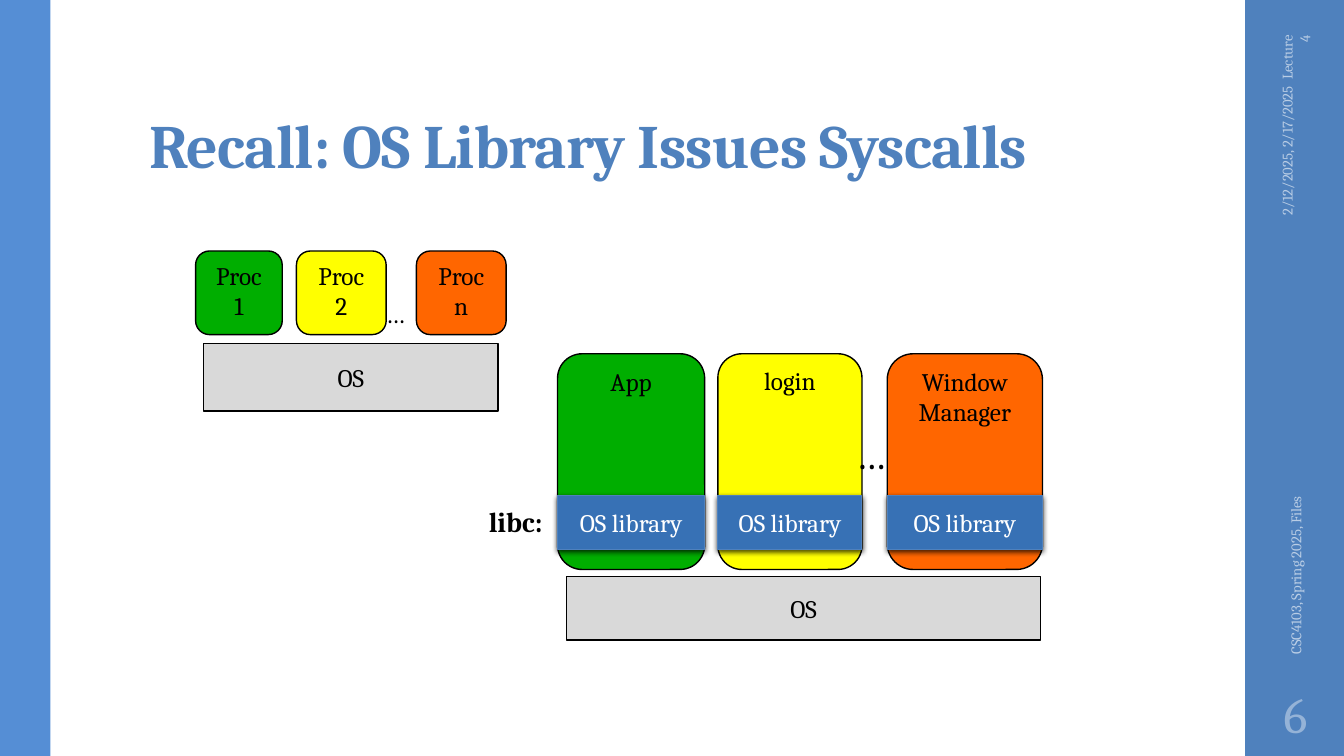
from lxml import etree
from pptx import Presentation
from pptx.dml.color import RGBColor
from pptx.enum.shapes import MSO_SHAPE
from pptx.enum.text import MSO_ANCHOR, PP_ALIGN
from pptx.oxml.ns import qn
from pptx.util import Inches, Pt

RECT, ROUNDED = MSO_SHAPE.RECTANGLE, MSO_SHAPE.ROUNDED_RECTANGLE
TOP, MIDDLE, BOTTOM = MSO_ANCHOR.TOP, MSO_ANCHOR.MIDDLE, MSO_ANCHOR.BOTTOM
LEFT, CENTER, RIGHT = PP_ALIGN.LEFT, PP_ALIGN.CENTER, PP_ALIGN.RIGHT

FONT = "Cambria"
BLACK = RGBColor(0x00, 0x00, 0x00)
WHITE = RGBColor(0xFF, 0xFF, 0xFF)
BLUE = RGBColor(0x4F, 0x81, 0xBD)
LIGHT_BLUE = RGBColor(0x55, 0x8E, 0xD5)
PALE_BLUE = RGBColor(0xB9, 0xCD, 0xE5)
NUMBER_BLUE = RGBColor(0x95, 0xB3, 0xD7)
LIBRARY_BLUE = RGBColor(0x37, 0x71, 0xB5)
GRAY = RGBColor(0xD9, 0xD9, 0xD9)
GREEN = RGBColor(0x00, 0xAE, 0x00)
YELLOW = RGBColor(0xFF, 0xFF, 0x00)
ORANGE = RGBColor(0xFF, 0x66, 0x00)

PROCESSES = [
    ("Proc 1", 1.94, 0.86, GREEN),
    ("Proc 2", 2.94, 0.89, YELLOW),
    ("Proc n", 4.13, 0.89, ORANGE),
]
PROGRAMS = [
    ("App", 5.53, 1.46, GREEN),
    ("login", 7.12, 1.43, YELLOW),
    ("Window Manager", 8.8, 1.54, ORANGE),
]


def write(sp, text, size, color, align, anchor, bold=False, wrap=True):
    tf = sp.text_frame
    tf.word_wrap = wrap
    tf.vertical_anchor = anchor
    p = tf.paragraphs[0]
    p.text = text
    p.alignment = align
    p.font.name = FONT
    p.font.size = Pt(size)
    p.font.bold = bold
    p.font.color.rgb = color
    return tf


def add_box(shapes, kind, box, fill, line=None, line_width=1):
    sp = shapes.add_shape(kind, *map(Inches, box))
    sp.shadow.inherit = False
    sp.fill.solid()
    sp.fill.fore_color.rgb = fill
    if line is None:
        sp.line.fill.background()
    else:
        sp.line.color.rgb = line
        sp.line.width = Pt(line_width)
    return sp


def add_label(shapes, box, text, size, color=BLACK, align=LEFT, anchor=TOP,
              bold=False, wrap=True, rotation=0):
    sp = shapes.add_textbox(*map(Inches, box))
    sp.rotation = rotation
    return write(sp, text, size, color, align, anchor, bold, wrap)


def add_shadow(sp):
    effects = sp._element.spPr.find(qn("a:effectLst"))
    shadow = etree.SubElement(effects, qn("a:outerShdw"), blurRad=str(Pt(4)),
                              dist=str(Pt(1.2)), dir="5400000", rotWithShape="0")
    color = etree.SubElement(shadow, qn("a:srgbClr"), val=str(BLACK))
    etree.SubElement(color, qn("a:alpha"), val="75000")


def add_os(shapes, box):
    sp = add_box(shapes, RECT, box, GRAY, BLACK)
    write(sp, "OS", 18, BLACK, CENTER, MIDDLE)


def add_processes(shapes, processes, top, height):
    for name, left, width, fill in processes:
        sp = add_box(shapes, ROUNDED, (left, top, width, height), fill, BLACK)
        write(sp, name, 18, BLACK, CENTER, TOP)


def add_library(shapes, left, width):
    sp = add_box(shapes, RECT, (left, 4.92, width, 0.53), LIBRARY_BLUE, BLUE, 0.75)
    add_shadow(sp)
    write(sp, "OS library", 18, WHITE, CENTER, MIDDLE)


def add_frame(shapes):
    add_box(shapes, RECT, (12.35, 0, 1, 7.5), BLUE)
    add_box(shapes, RECT, (0, 0, 0.5, 7.5), LIGHT_BLUE)
    add_label(shapes, (11.81, 1.09, 2.08, 0.4), "2/12/2025, 2/17/2025  Lecture 4",
              10.5, PALE_BLUE, RIGHT, MIDDLE, rotation=270)
    add_label(shapes, (10.89, 4.43, 3.92, 0.4), "CSC4103, Spring 2025, Files",
              10.5, PALE_BLUE, LEFT, MIDDLE, rotation=270)
    tf = add_label(shapes, (12.35, 6.75, 1, 0.65), "6", 36, NUMBER_BLUE, CENTER, MIDDLE)
    tf.margin_left = tf.margin_right = Inches(0.05)


def add_title(shapes, text):
    tf = add_label(shapes, (1.38, 0.32, 10.6, 1.53), text, 44, BLUE,
                   anchor=BOTTOM, bold=True)
    tf.margin_top = Inches(0.03)
    p = tf.paragraphs[0]
    p.line_spacing = 0.9
    p.runs[0].font._element.set("spc", "-50")


def add_simple_view(shapes):
    add_os(shapes, (2.02, 3.41, 2.92, 0.67))
    add_processes(shapes, PROCESSES, 2.49, 0.83)
    add_label(shapes, (3.73, 2.91, 0.45, 0.4), "…", 18, wrap=False)


def add_library_view(shapes):
    add_os(shapes, (5.62, 5.72, 4.7, 0.63))
    add_processes(shapes, PROGRAMS, 3.51, 2.14)
    add_label(shapes, (8.39, 4.22, 0.65, 0.57), "…", 28)
    for _, left, width, _ in PROGRAMS:
        add_library(shapes, left, width)
    add_label(shapes, (4.74, 4.96, 0.74, 0.44), "libc:", 20, align=RIGHT,
              bold=True, wrap=False)


def main():
    prs = Presentation()
    prs.slide_width, prs.slide_height = Inches(13.33), Inches(7.5)
    s = prs.slides.add_slide(prs.slide_layouts[6])
    add_frame(s.shapes)
    add_title(s.shapes, "Recall: OS Library Issues Syscalls")
    add_simple_view(s.shapes.add_group_shape().shapes)
    add_library_view(s.shapes.add_group_shape().shapes)
    prs.save("out.pptx")


if __name__ == "__main__":
    main()
